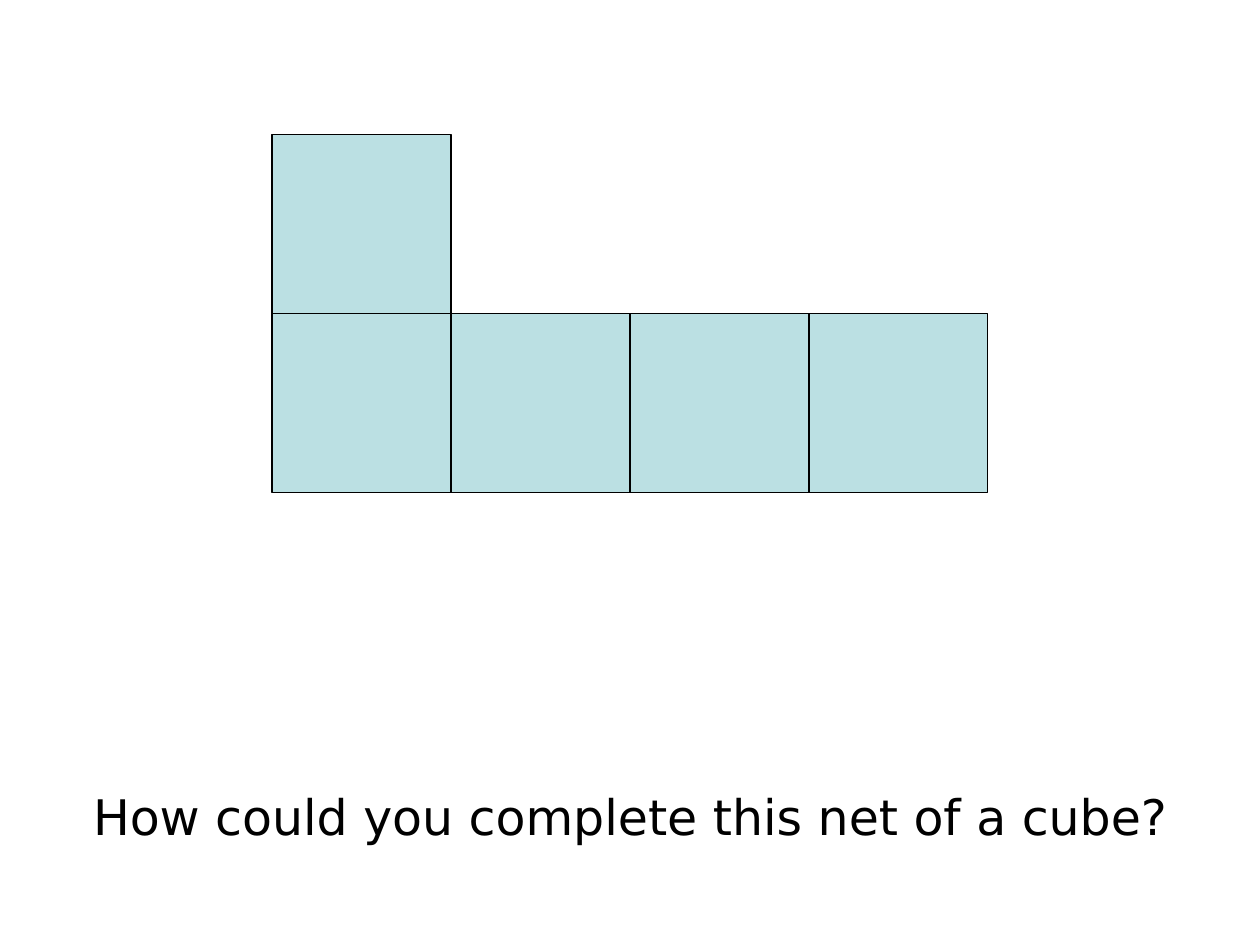
from dataclasses import dataclass

from pptx import Presentation
from pptx.dml.color import RGBColor as RGB
from pptx.enum.shapes import MSO_SHAPE as Shape
from pptx.enum.text import MSO_ANCHOR as Anchor, MSO_AUTO_SIZE as Fit, PP_ALIGN as Align
from pptx.util import Inches, Pt

QUESTION = "How could you complete this net of a cube?"
NET = [
    "#...",
    "####",
]
LEFT, TOP, SIDE = 2.16, 1.07, 1.42


@dataclass(frozen=True)
class Theme:
    face: RGB = RGB.from_string("BBE0E3")
    ink: RGB = RGB.from_string("000000")
    font: str = "DejaVu Sans"
    size: Pt = Pt(28)
    line: Pt = Pt(0.75)


THEME = Theme()


def add_face(group, row, col):
    face = group.shapes.add_shape(
        Shape.RECTANGLE,
        Inches(LEFT + col * SIDE), Inches(TOP + row * SIDE),
        Inches(SIDE), Inches(SIDE),
    )
    face.shadow.inherit = False
    face.fill.solid()
    face.fill.fore_color.rgb = THEME.face
    face.line.color.rgb = THEME.ink
    face.line.width = THEME.line


def add_net(slide):
    group = slide.shapes.add_group_shape()
    for row, cells in enumerate(NET):
        for col, cell in enumerate(cells):
            if cell == "#":
                add_face(group, row, col)


def set_title(slide):
    title = slide.shapes.title
    title.left, title.top = Inches(0.51), Inches(6.19)
    title.width, title.height = Inches(8.98), Inches(0.57)
    frame = title.text_frame
    frame.text = QUESTION
    frame.word_wrap = True
    frame.auto_size = Fit.NONE
    frame.vertical_anchor = Anchor.TOP
    para = frame.paragraphs[0]
    para.alignment = Align.CENTER
    para.font.name = THEME.font
    para.font.size = THEME.size
    para.font.color.rgb = THEME.ink


def main():
    deck = Presentation()
    deck.slide_width, deck.slide_height = Inches(10), Inches(7.5)
    slide = deck.slides.add_slide(deck.slide_layouts.get_by_name("Title Only"))
    add_net(slide)
    set_title(slide)
    deck.save("out.pptx")


if __name__ == "__main__":
    main()
